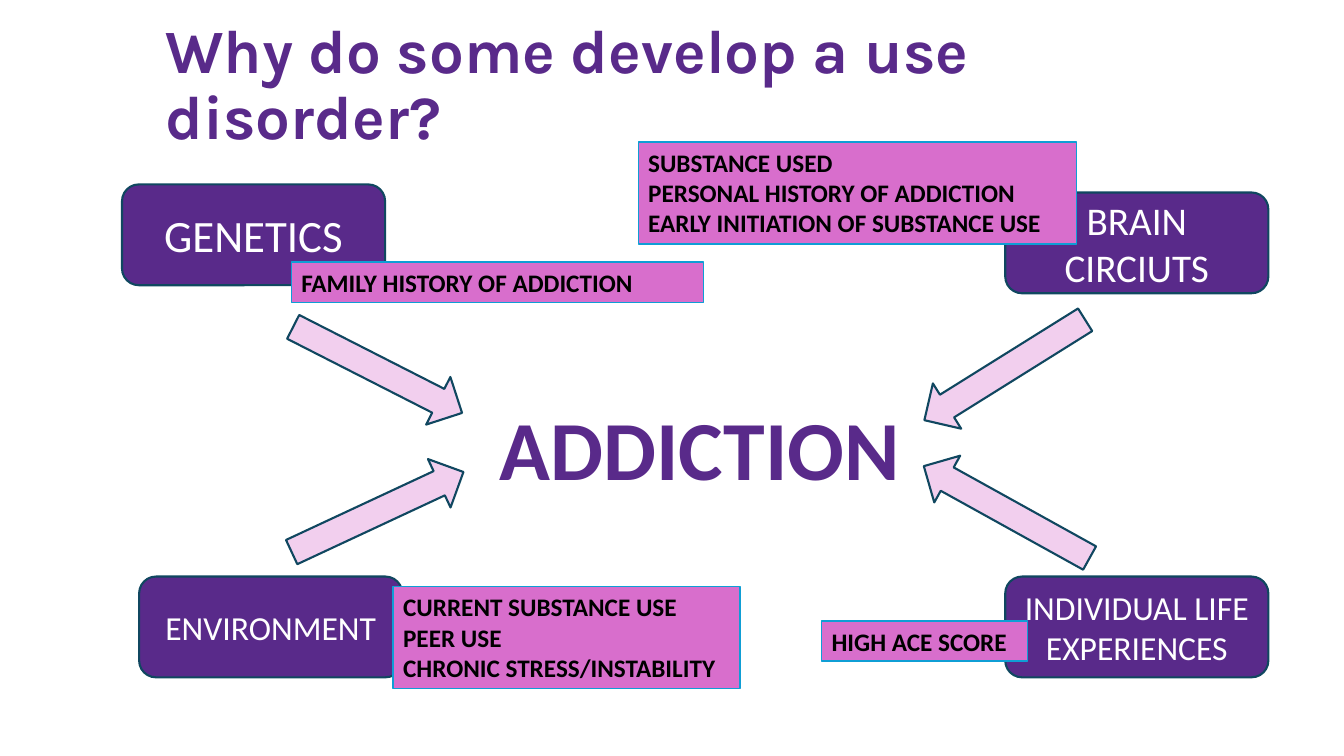
from dataclasses import dataclass
from pptx import Presentation
from pptx.dml.color import RGBColor
from pptx.enum.shapes import MSO_SHAPE as SHAPE
from pptx.enum.text import MSO_ANCHOR as ANCHOR, PP_ALIGN as ALIGN
from pptx.util import Pt

TITLE = "Why do some develop a use disorder?"
CENTER = "ADDICTION"
CAUSES = [
    ("INDIVIDUAL LIFE EXPERIENCES", 997, 572, 24),
    ("ENVIRONMENT", 138, 572, 24),
    ("BRAIN CIRCIUTS", 997, 191, 28),
    ("GENETICS", 121, 183, 32),
]
ARROWS = [(348, 273, 117), (972, 414, 299), (348, 414, 65), (970, 273, 238)]
EXAMPLES = [
    (["HIGH ACE SCORE"], (815, 616, 204, 40)),
    (["FAMILY HISTORY OF ADDICTION"], (289, 260, 409, 40)),
    (["SUBSTANCE USED", "PERSONAL HISTORY OF ADDICTION",
      "EARLY INITIATION OF SUBSTANCE USE"], (633, 141, 435, 101)),
    (["CURRENT SUBSTANCE USE", "PEER USE",
      "CHRONIC STRESS/INSTABILITY"], (390, 582, 344, 101)),
]
CAUSE_SIZE = (261, 100)
ARROW_SIZE = (53, 188)


@dataclass(frozen=True)
class Theme:
    purple: str = "592A8A"
    navy: str = "104760"
    pink: str = "D86ECC"
    pale: str = "F2CFEE"
    blue: str = "0F9ED5"
    white: str = "FFFFFF"
    black: str = "000000"
    head: str = "Karla"
    body: str = "Calibri"
    title_size: int = 44
    center_size: int = 60
    example_size: int = 18


T = Theme()
EMU_PER_PX = 9144


def px(*lengths):
    return [n * EMU_PER_PX for n in lengths]


def write(tf, lines, color, size, font=T.body, bold=False,
          align=ALIGN.LEFT, anchor=ANCHOR.TOP, spacing=1.0):
    tf.word_wrap = True
    tf.vertical_anchor = anchor
    for i, line in enumerate(lines):
        p = tf.paragraphs[0] if i == 0 else tf.add_paragraph()
        p.alignment = align
        p.line_spacing = spacing
        r = p.add_run()
        r.text = line
        for name, value in dict(name=font, size=Pt(size), bold=bold).items():
            setattr(r.font, name, value)
        r.font.color.rgb = RGBColor.from_string(color)


def add_box(s, kind, box, fill, line, width):
    sp = s.shapes.add_shape(kind, *px(*box))
    sp.shadow.inherit = False
    sp.fill.solid()
    sp.fill.fore_color.rgb = RGBColor.from_string(fill)
    sp.line.color.rgb = RGBColor.from_string(line)
    sp.line.width = Pt(width)
    return sp


def main():
    prs = Presentation()
    prs.slide_width, prs.slide_height = px(1333, 750)
    s = prs.slides.add_slide(prs.slide_layouts[5])

    title = s.shapes.title
    title.left, title.top, title.width, title.height = px(154, 21, 1024, 130)
    write(title.text_frame, [TITLE], T.purple, T.title_size, T.head, True,
          anchor=ANCHOR.MIDDLE, spacing=0.9)

    for text, x, y, size in CAUSES:
        sp = add_box(s, SHAPE.ROUNDED_RECTANGLE, (x, y, *CAUSE_SIZE), T.purple, T.navy, 1.5)
        write(sp.text_frame, [text], T.white, size, align=ALIGN.CENTER, anchor=ANCHOR.MIDDLE)

    center = s.shapes.add_textbox(*px(486, 388, 424, 111))
    write(center.text_frame, [CENTER], T.purple, T.center_size, bold=True)

    for x, y, angle in ARROWS:
        sp = add_box(s, SHAPE.UP_ARROW, (x, y, *ARROW_SIZE), T.pale, T.navy, 1.5)
        sp.rotation = angle

    for lines, box in EXAMPLES:
        sp = add_box(s, SHAPE.RECTANGLE, box, T.pink, T.blue, 1)
        write(sp.text_frame, lines, T.black, T.example_size, bold=True)

    prs.save("out.pptx")


if __name__ == "__main__":
    main()
